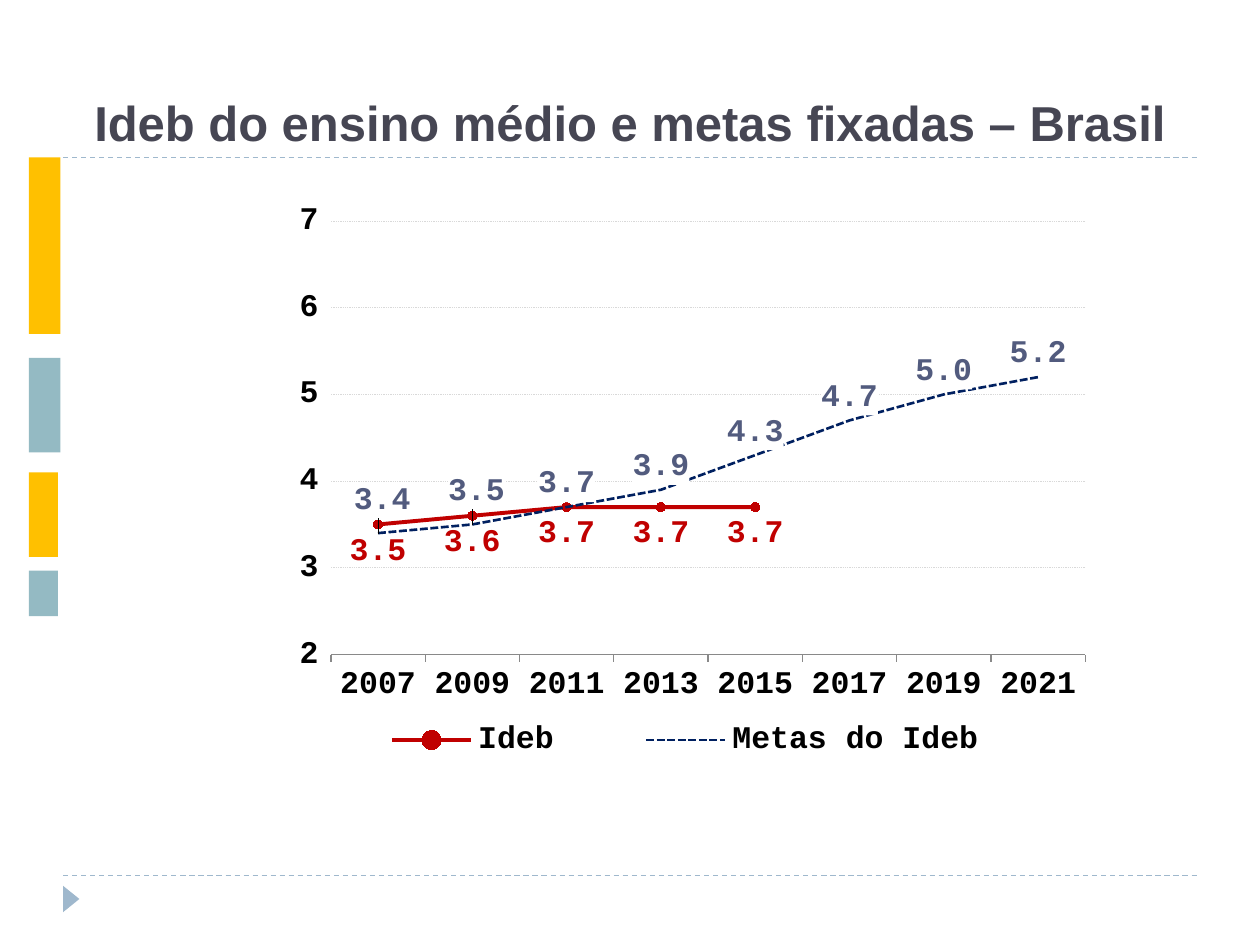
from lxml import etree
from pptx import Presentation
from pptx.chart.data import CategoryChartData
from pptx.dml.color import RGBColor
from pptx.enum.chart import (XL_CHART_TYPE, XL_LABEL_POSITION, XL_LEGEND_POSITION,
                             XL_MARKER_STYLE, XL_TICK_MARK)
from pptx.enum.dml import MSO_LINE
from pptx.enum.shapes import MSO_CONNECTOR, MSO_SHAPE
from pptx.enum.text import MSO_ANCHOR, PP_ALIGN
from pptx.oxml import parse_xml
from pptx.oxml.ns import nsdecls, qn
from pptx.util import Inches, Pt

RECT, TRIANGLE = MSO_SHAPE.RECTANGLE, MSO_SHAPE.ISOSCELES_TRIANGLE
ABOVE, BELOW = XL_LABEL_POSITION.ABOVE, XL_LABEL_POSITION.BELOW
DASH, SYS_DASH, DOT = MSO_LINE.DASH, MSO_LINE.SQUARE_DOT, MSO_LINE.ROUND_DOT
COLORS = {"rule": "9FB8CD", "gold": "FFC000", "teal": "94BAC3", "title": "464653",
          "text": "000000", "grid": "D9D9D9", "axis": "898989", "ideb": "C00000",
          "goal": "002060", "goal_label": "525B7E"}
YEARS = [str(year) for year in range(2007, 2022, 2)]
IDEB = [3.5, 3.6, 3.7, 3.7, 3.7, None, None, None]
GOALS = [3.4, 3.5, 3.7, 3.9, 4.3, 4.7, 5.0, 5.2]


def rgb(name):
    return RGBColor.from_string(COLORS[name])


def set_font(font, color, **formats):
    for key, value in formats.items():
        setattr(font, key, value)
    font.color.rgb = rgb(color)


def set_line(line, color, width, dash=None):
    line.color.rgb = rgb(color)
    line.width = Pt(width)
    if dash is not None:
        line.dash_style = dash


def add_block(s, kind, box, color):
    sp = s.shapes.add_shape(kind, *map(Inches, box))
    sp.shadow.inherit = False
    sp.fill.solid()
    sp.fill.fore_color.rgb = rgb(color)
    sp.line.fill.background()
    return sp


def add_decoration(s, left, right, top, bottom):
    for y in (bottom, top):
        line = s.shapes.add_connector(MSO_CONNECTOR.STRAIGHT, Inches(left), Inches(y),
                                      Inches(right), Inches(y))
        set_line(line.line, "rule", 0.75, DASH)
        etree.SubElement(line._element.spPr, qn("a:effectLst"))
    add_block(s, TRIANGLE, (0.46, bottom + 0.12, 0.21, 0.13), "rule").rotation = 90
    bars = ((top, 0.25, 1.4, "gold"), (2.84, 0.25, 0.75, "teal"),
            (3.75, 0.23, 0.67, "gold"), (4.53, 0.23, 0.36, "teal"))
    for y, width, height, color in bars:
        add_block(s, RECT, (0.23, y, width, height), color)


def add_title(s, left, top, width, height):
    sp = s.shapes.title
    sp.left, sp.top, sp.width, sp.height = map(Inches, (left, top, width, height))
    tf = sp.text_frame
    tf.vertical_anchor = MSO_ANCHOR.BOTTOM
    p = tf.paragraphs[0]
    p.alignment = PP_ALIGN.CENTER
    r = p.add_run()
    r.text = "Ideb do ensino médio e metas fixadas – Brasil"
    set_font(r.font, "title", name="Arial", size=Pt(28), bold=True)


def layout_xml(x, y, w=None, h=None, inner=False):
    parts = ['<c:layoutTarget val="inner"/>'] if inner else []
    if w is not None:
        parts += ['<c:xMode val="edge"/><c:yMode val="edge"/>']
    sizes = (("x", x), ("y", y), ("w", w), ("h", h))
    parts += [f'<c:{tag} val="{value}"/>' for tag, value in sizes if value is not None]
    return parse_xml(f'<c:layout {nsdecls("c")}><c:manualLayout>{"".join(parts)}'
                     '</c:manualLayout></c:layout>')


def set_layout(element, before, layout):
    for old in element.findall(qn("c:layout")):
        element.remove(old)
    before.addnext(layout)


def add_white_back(labels):
    labels.find(qn("c:txPr")).addprevious(parse_xml(
        f'<c:spPr {nsdecls("c", "a")}><a:solidFill><a:srgbClr val="FFFFFF"/>'
        '</a:solidFill></c:spPr>'))


def format_series(series, color, width, label_color, position, text):
    series.smooth = False
    set_line(series.format.line, color, width)
    labels = series.data_labels
    labels.show_value = True
    labels.number_format = "#,##0.0"
    labels.number_format_is_linked = False
    labels.position = position
    set_font(labels.font, label_color, **text)


def add_chart(s, left, top, width, height):
    data = CategoryChartData()
    data.categories = YEARS
    data.add_series("Ideb", IDEB)
    data.add_series("Metas do Ideb", GOALS)
    chart = s.shapes.add_chart(XL_CHART_TYPE.LINE_MARKERS,
                               *map(Inches, (left, top, width, height)), data).chart
    text = {"name": "Courier New", "size": Pt(18), "bold": True}
    set_font(chart.font, "text", **text)
    chart.has_title = False
    plot = chart.plots[0]
    plot.vary_by_categories = False
    area = plot._element.getparent()
    for old in area.findall(qn("c:layout")):
        area.remove(old)
    area.insert(0, layout_xml(0.17, 0.044, 0.724, 0.74, inner=True))

    chart.has_legend = True
    legend = chart.legend
    legend.position = XL_LEGEND_POSITION.RIGHT
    legend.include_in_layout = False
    set_layout(legend._element, legend._element.find(qn("c:legendPos")),
               layout_xml(0.15, 0.88, 0.72, 0.1))

    axis = chart.category_axis
    axis.major_tick_mark = XL_TICK_MARK.OUTSIDE
    set_line(axis.format.line, "axis", 0.75)
    axis = chart.value_axis
    formats = {"minimum_scale": 2, "maximum_scale": 7, "major_unit": 1,
               "major_tick_mark": XL_TICK_MARK.OUTSIDE}
    for key, value in formats.items():
        setattr(axis, key, value)
    axis.tick_labels.number_format = "0"
    axis.tick_labels.number_format_is_linked = False
    axis.format.line.fill.background()
    set_line(axis.major_gridlines.format.line, "grid", 0.5, DOT)

    ideb, goals = plot.series
    format_series(ideb, "ideb", 2.25, "ideb", BELOW, text)
    ideb.marker.style = XL_MARKER_STYLE.CIRCLE
    ideb.marker.size = 5
    ideb.marker.format.fill.solid()
    ideb.marker.format.fill.fore_color.rgb = rgb("ideb")
    set_line(ideb.marker.format.line, "ideb", 0.75)

    format_series(goals, "goal", 1.5, "goal_label", ABOVE, text)
    goals.format.line.dash_style = SYS_DASH
    goals.marker.style = XL_MARKER_STYLE.NONE
    add_white_back(goals.data_labels._element)
    for index in (0, 1):
        label = goals.points[index].data_label
        label.position = ABOVE
        set_font(label.font, "goal_label", **text)
    for element in goals.data_labels._element.findall(qn("c:dLbl")):
        set_layout(element, element.find(qn("c:idx")), layout_xml(0.004, -0.017))


def main():
    prs = Presentation()
    prs.slide_width, prs.slide_height = Inches(10), Inches(7.5)
    s = prs.slides.add_slide(prs.slide_layouts[5])
    add_decoration(s, 0.5, 9.5, 1.25, 6.95)
    add_title(s, 0.5, 0.17, 9, 1.08)
    add_chart(s, 1.22, 1.55, 8.27, 4.65)
    prs.save("out.pptx")


if __name__ == "__main__":
    main()
